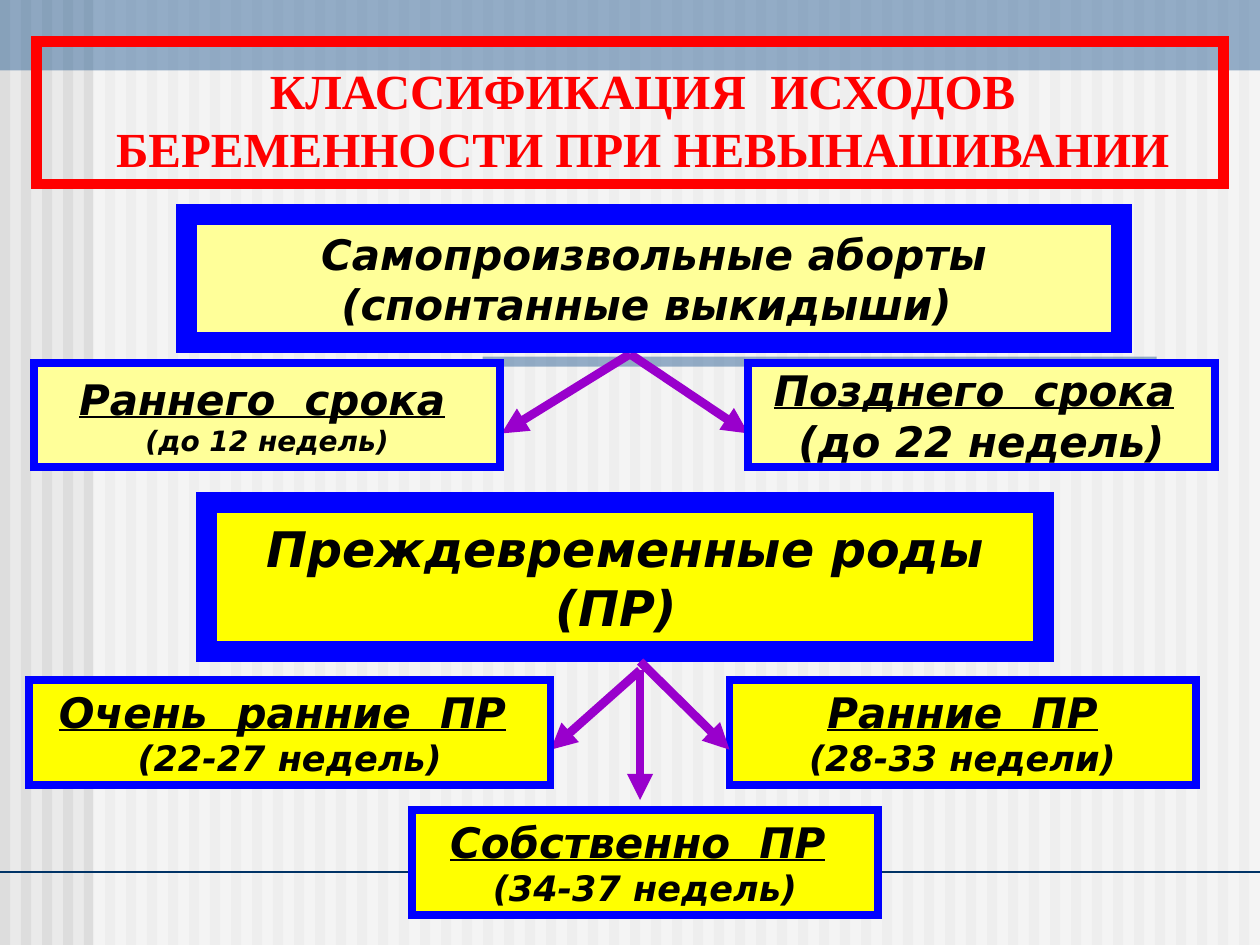
from lxml.etree import SubElement
from pptx import Presentation
from pptx.dml.color import RGBColor
from pptx.enum.shapes import MSO_CONNECTOR as CONN, MSO_SHAPE as SHAPE
from pptx.enum.text import MSO_ANCHOR as ANCHOR, PP_ALIGN as ALIGN
from pptx.oxml.ns import qn
from pptx.util import Inches, Pt


def rgb(code):
    return RGBColor.from_string(code)


class Board:
    sans, serif = "DejaVu Sans", "Times New Roman"
    black, red, blue, purple = "000000", "FF0000", "0000FF", "9900CC"
    cream, yellow = "FFFF99", "FFFF00"
    paper, stripe, white, steel, navy = "EAEAEA", "DDDDDD", "FFFFFF", "336699", "003366"

    def __init__(self, prs):
        self.slide = prs.slides.add_slide(prs.slide_layouts[6])
        fill = self.slide.background.fill
        fill.solid()
        fill.fore_color.rgb = rgb(self.paper)

    def rect(self, at, fill=None, alpha=None, line=None, width=0):
        sp = self.slide.shapes.add_shape(SHAPE.RECTANGLE, *map(Inches, at))
        sp.shadow.inherit = False
        if fill:
            sp.fill.solid()
            sp.fill.fore_color.rgb = rgb(fill)
        else:
            sp.fill.background()
        if alpha:
            color = sp.fill._xPr.find(qn("a:solidFill"))[0]
            SubElement(color, qn("a:alpha"), val=str(alpha * 1000))
        if line:
            sp.line.color.rgb = rgb(line)
            sp.line.width = Pt(width)
            SubElement(sp.line._get_or_add_ln(), qn("a:miter"), lim="800000")
        else:
            sp.line.fill.background()
        return sp

    def line(self, start, end, color, width, arrow=False):
        cn = self.slide.shapes.add_connector(CONN.STRAIGHT, *map(Inches, start + end))
        cn.line.color.rgb = rgb(color)
        cn.line.width = Pt(width)
        if arrow:
            SubElement(cn.line._get_or_add_ln(), qn("a:tailEnd"), type="triangle")
        SubElement(cn._element.spPr, qn("a:effectLst"))

    def arrow(self, start, end):
        self.line(start, end, self.purple, 5, arrow=True)

    def text(self, sp, paragraphs, font, color, italic=True, anchor=ANCHOR.MIDDLE):
        tf = sp.text_frame
        tf.word_wrap = True
        tf.vertical_anchor = anchor
        for i, runs in enumerate(paragraphs):
            p = tf.add_paragraph() if i else tf.paragraphs[0]
            p.alignment = ALIGN.CENTER
            for words, size, underline in runs:
                r = p.add_run()
                r.text = words
                r.font.name = font
                r.font.size = Pt(size)
                r.font.bold = True
                r.font.italic = italic
                r.font.underline = underline
                r.font.color.rgb = rgb(color)
        return tf

    def title(self, at, words):
        sp = self.rect(at, line=self.red, width=6)
        tf = self.text(sp, [[(words, 28, False)]], self.serif, self.red, False, ANCHOR.BOTTOM)
        tf.paragraphs[0]._p.get_or_add_pPr().set("marL", str(Inches(0.2)))

    def box(self, at, fill, paragraphs, width=4.5):
        sp = self.rect(at, fill, line=self.blue, width=width)
        self.text(sp, paragraphs, self.sans, self.black)

    def heading(self, at, fill, words, size):
        self.box(at, fill, [[(words, size, False)]], width=12)

    def backdrop(self):
        for i in range(60):
            self.rect((i / 6, 0, 0.08, 7.5), self.stripe)
        self.rect((0.74, 0, 9.26, 7.5), self.white, 50)
        self.rect((0, 0, 10, 0.56), self.steel, 50)
        self.rect((3.83, 2.83, 5.35, 0.08), self.steel, 50)
        self.line((0, 6.92), (10, 6.92), self.navy, 1.5)


def main():
    prs = Presentation()
    prs.slide_width, prs.slide_height = Inches(10), Inches(7.5)
    s = Board(prs)
    s.backdrop()
    s.title((0.29, 0.33, 9.42, 1.13), "КЛАССИФИКАЦИЯ  ИСХОДОВ БЕРЕМЕННОСТИ ПРИ НЕВЫНАШИВАНИИ")

    abortion, birth = (5, 2.81), (5.08, 5.32)
    for start, end in [(abortion, (3.98, 3.44)), (abortion, (5.94, 3.44)),
                       (birth, (4.37, 5.95)), (birth, (5.08, 6.35))]:
        s.arrow(start, end)

    s.heading((1.48, 1.7, 7.42, 1.02), s.cream,
              "Самопроизвольные аборты (спонтанные выкидыши) ", 24)
    s.box((0.27, 2.88, 3.7, 0.83), s.cream,
          [[("Раннего  срока", 24, True), (" ", 16, False)], [("(до 12 недель)", 16, False)]])
    s.box((5.94, 2.88, 3.7, 0.83), s.cream,
          [[("Позднего  срока", 24, True), (" ", 24, False)], [("(до 22 недель)", 24, False)]])

    s.heading((1.64, 3.99, 6.64, 1.18), s.yellow, "Преждевременные роды (ПР) ", 28)
    s.box((0.23, 5.4, 4.14, 0.83), s.yellow,
          [[("Очень  ранние  ПР", 24, True), ("  ", 24, False), ("(22-27 недель)", 20, False)]])
    s.box((5.79, 5.4, 3.7, 0.83), s.yellow,
          [[("Ранние  ПР", 24, True)], [("(28-33 недели)", 20, False)]])
    s.box((3.27, 6.43, 3.7, 0.83), s.yellow,
          [[("Собственно  ПР", 24, True), ("  ", 24, False), ("(34-37 недель)", 20, False)]])
    s.arrow((5.08, 5.25), (5.79, 5.95))
    prs.save("out.pptx")


if __name__ == "__main__":
    main()
